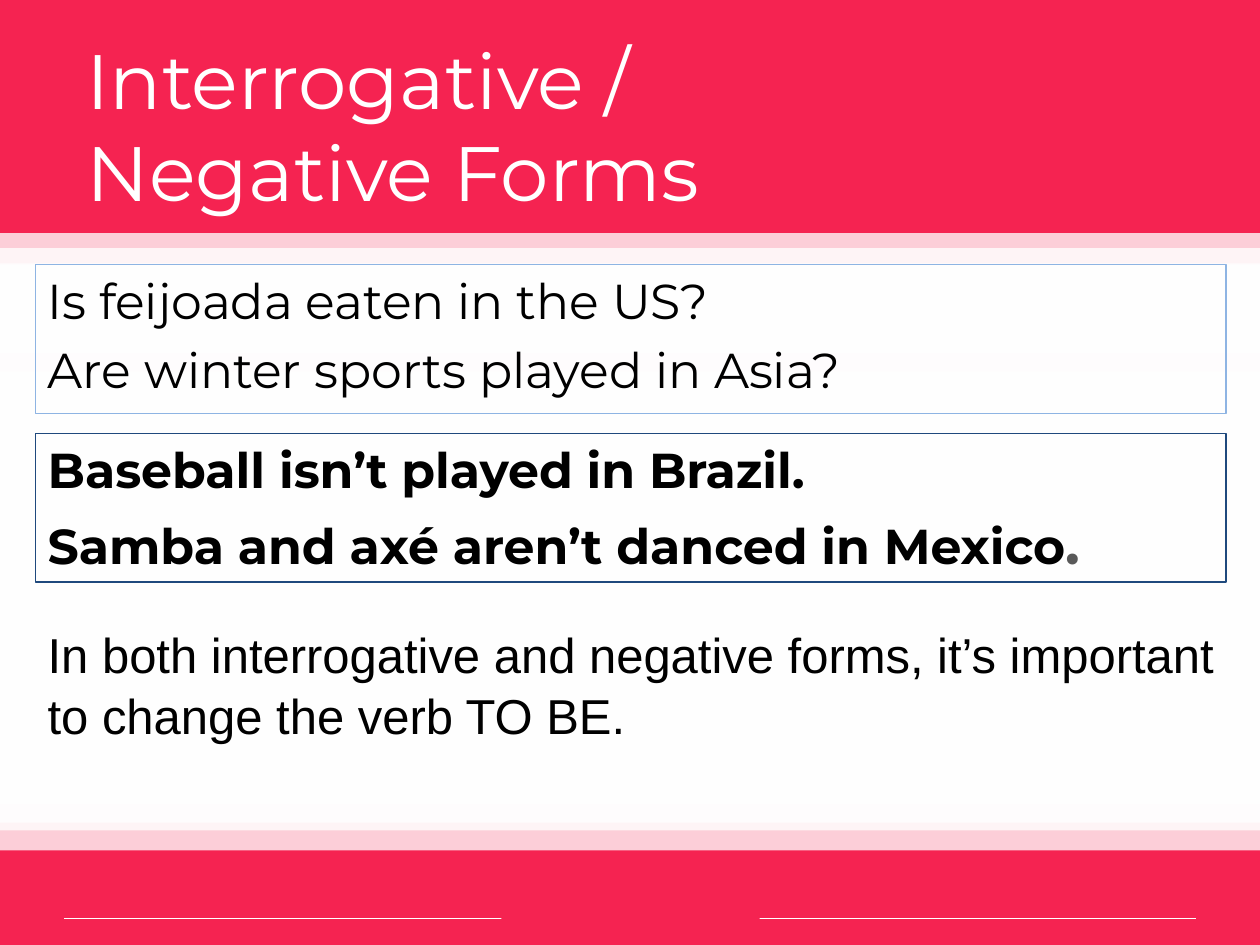
from lxml import etree
from pptx import Presentation
from pptx.dml.color import RGBColor
from pptx.enum.shapes import MSO_CONNECTOR, MSO_SHAPE
from pptx.enum.text import MSO_ANCHOR, PP_ALIGN
from pptx.oxml.ns import qn
from pptx.util import Pt

PX = 9144
RED = RGBColor(0xF5, 0x23, 0x51)
WHITE = RGBColor(0xFF, 0xFF, 0xFF)
BLACK = RGBColor(0, 0, 0)
GREY = RGBColor(0x59, 0x59, 0x59)
SKY = RGBColor(0x8E, 0xB4, 0xE3)
NAVY = RGBColor(0x1F, 0x49, 0x7D)
SANS = "Montserrat"


def scale(box):
    return [n * PX for n in box]


def add_rect(slide, box, fill=None, line=None, alpha=None):
    rect = slide.shapes.add_shape(MSO_SHAPE.RECTANGLE, *scale(box))
    rect.shadow.inherit = False
    if fill is None:
        rect.fill.background()
    else:
        rect.fill.solid()
        rect.fill.fore_color.rgb = fill
    if line is None:
        rect.line.fill.background()
    else:
        rect.line.color.rgb = line
        rect.line.width = Pt(0.75)
    if alpha:
        color = rect.fill._xPr.find(".//" + qn("a:srgbClr"))
        etree.SubElement(color, qn("a:alpha"), val=str(alpha * 1000))
    return rect


def write(shape, lines, size=28, color=BLACK, face=SANS, bold=False, gap=0):
    frame = shape.text_frame
    frame.word_wrap = True
    frame.vertical_anchor = MSO_ANCHOR.TOP
    for i, line in enumerate(lines):
        para = frame.paragraphs[0] if i == 0 else frame.add_paragraph()
        para.alignment = PP_ALIGN.LEFT
        para.space_before = Pt(gap if i else 0)
        para.add_run().text = line
        para.font.name = face
        para.font.size = Pt(size)
        para.font.bold = bold
        para.font.color.rgb = color
    return frame


def add_text(slide, box, lines, **style):
    return write(slide.shapes.add_textbox(*scale(box)), lines, **style)


def add_bands(slide, box):
    left, top, width, _ = box
    bands = [(209, 71), (197, 71), (185, 51), (295, 358), (210, 409),
             (253, 338), (583, 92), (567, 92), (220, 418)]
    for down, height in bands:
        add_rect(slide, (left, top + down, width, height), WHITE, alpha=78)


def add_foot(slide, box):
    left, top, width, height = box
    add_rect(slide, box, RED)
    mid, inset = top + 31, 51
    ends = scale((left + inset, mid, left + width - inset, mid))
    rule = slide.shapes.add_connector(MSO_CONNECTOR.STRAIGHT, *ends)
    rule.line.color.rgb = WHITE
    rule.line.width = Pt(0.25)
    etree.SubElement(rule._element.spPr, qn("a:effectLst"))
    add_rect(slide, (left + 398, top, 205, height), RED)


def add_body(slide, box):
    left, top, width, height = box
    ask = add_rect(slide, (left, top, width, height), line=SKY)
    write(ask, ["Is feijoada eaten in the US?",
                "Are winter sports played in Asia?"], gap=5.6)
    deny = add_rect(slide, (left, top + 134, width, height), line=NAVY)
    frame = write(deny, ["Baseball isn’t played in Brazil.",
                         "Samba and axé aren’t danced in Mexico"],
                  bold=True, gap=5.6)
    stop = frame.paragraphs[-1].add_run()
    stop.text = "."
    stop.font.size = Pt(32)
    stop.font.color.rgb = GREY
    note = add_text(slide, (left, top + 275, width, height),
                    ["In both interrogative and negative forms, it’s "
                     "important to change the verb TO BE."], face="Arial")
    note.margin_top = 8 * PX
    note.paragraphs[0].line_spacing = 1.05


def main():
    deck = Presentation()
    deck.slide_width, deck.slide_height = scale((1000, 750))
    slide = deck.slides.add_slide(deck.slide_layouts[6])
    add_rect(slide, (0, 0, 1000, 750), RED)
    add_foot(slide, (0, 698, 1000, 52))
    add_bands(slide, (0, 0, 1000, 750))
    add_text(slide, (59, 21, 890, 142),
             ["Interrogative /", "Negative Forms"], size=44, color=WHITE)
    add_body(slide, (28, 210, 945, 118))
    deck.save("out.pptx")


if __name__ == "__main__":
    main()
